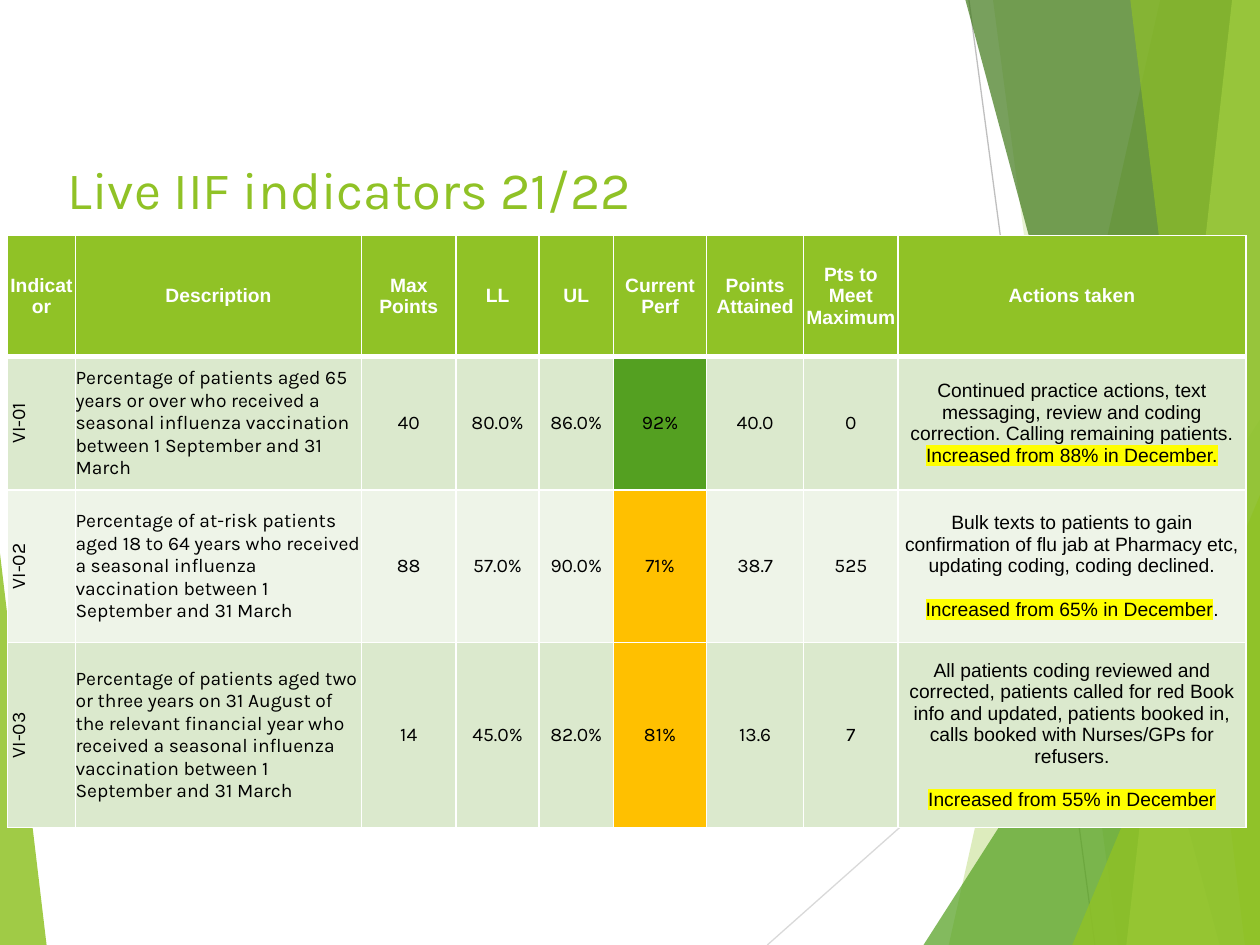
from lxml.etree import SubElement
from pptx import Presentation
from pptx.dml.color import RGBColor
from pptx.enum.shapes import MSO_CONNECTOR as LINK, MSO_SHAPE as SHAPE
from pptx.enum.text import MSO_ANCHOR as ANCHOR, PP_ALIGN as ALIGN
from pptx.oxml.ns import qn
from pptx.util import Inches, Pt

LIME = RGBColor(0x90, 0xC2, 0x26)
GREEN = RGBColor(0x54, 0xA0, 0x21)
DARK = RGBColor(0x3F, 0x78, 0x19)
PALE = RGBColor(0xC0, 0xE4, 0x74)
AMBER = RGBColor(0xFF, 0xC0, 0x00)
YELLOW = RGBColor(0xFF, 0xFF, 0x00)
BAND = RGBColor(0xDB, 0xE9, 0xCD)
LIGHT = RGBColor(0xEE, 0xF4, 0xE8)
WHITE = RGBColor(0xFF, 0xFF, 0xFF)
BLACK = RGBColor(0, 0, 0)
GRAY = RGBColor(0xBF, 0xBF, 0xBF)
SILVER = RGBColor(0xD9, 0xD9, 0xD9)

TITLE = "Live IIF indicators 21/22"
HEADS = ["Indicator", "Description", "Max Points", "LL", "UL", "Current Perf",
         "Points Attained", "Pts to Meet Maximum", "Actions taken"]
# Cells before the actions, action text, marked text, text after it, gap, score fill
ROWS = [
    (["VI-01", "Percentage of patients aged 65 years or over who received a seasonal "
      "influenza vaccination between 1 September and 31 March",
      "40", "80.0%", "86.0%", "92%", "40.0", "0"],
     "Continued practice actions, text messaging, review and coding correction. "
     "Calling remaining patients.",
     "Increased from 88% in December.", "", 0, GREEN),
    (["VI-02", "Percentage of at-risk patients aged 18 to 64 years who received a "
      "seasonal influenza vaccination between 1 September and 31 March",
      "88", "57.0%", "90.0%", "71%", "38.7", "525"],
     "Bulk texts to patients to gain confirmation of flu jab at Pharmacy etc, "
     "updating coding, coding declined.",
     "Increased from 65% in December", ".", 12.5, AMBER),
    (["VI-03", "Percentage of patients aged two or three years on 31 August of the "
      "relevant financial year who received a seasonal influenza vaccination "
      "between 1 September and 31 March",
      "14", "45.0%", "82.0%", "81%", "13.6", "7"],
     "All patients coding reviewed and corrected, patients called for red Book info "
     "and updated, patients booked in, calls booked with Nurses/GPs for refusers.",
     "Increased from 55% in December", "", 12.5, AMBER),
]
WIDTHS = [0.54, 2.27, 0.75, 0.66, 0.59, 0.74, 0.77, 0.75, 2.76]
HEIGHTS = [0.96, 1.06, 1.21, 1.47]
SCORE = HEADS.index("Current Perf")

LINES = [((7.69, 0), (8.69, 7.5), GRAY), ((10, 4.03), (6.09, 7.5), SILVER)]
# Bands reach the right edge: top left x, bottom left x, fill, opacity
# Wedges: box, apex position, fill, opacity
DECOR = [
    (9.21, 7.53, LIME, 30),
    (7.88, 8.87, LIME, 20),
    ((7.33, 3.33, 2.67, 4.17), 1, GREEN, 72),
    (7.66, 9.68, DARK, 70),
    (9.78, 8.94, PALE, 70),
    (8.97, 9.88, LIME, 65),
    ((8.51, 3.93, 1.49, 3.57), 1, LIME, 80),
    ((0, 4.39, 0.37, 3.11), 0, LIME, 85),
]


def paint(shape, color, alpha):
    shape.shadow.inherit = False
    shape.line.fill.background()
    shape.fill.solid()
    shape.fill.fore_color.rgb = color
    tint = shape.element.spPr.find(qn("a:solidFill"))[0]
    SubElement(tint, qn("a:alpha"), val=str(alpha * 1000))


def add_band(top, base):
    pts = [(Inches(x), Inches(y)) for x, y in
           [(top, -0.01), (10, -0.01), (10, 7.5), (base, 7.5)]]
    pen = shapes.build_freeform(*pts[0], scale=1.0)
    pen.add_line_segments(pts[1:], close=True)
    return pen.convert_to_shape()


def add_wedge(box, apex):
    wedge = shapes.add_shape(SHAPE.ISOSCELES_TRIANGLE, *map(Inches, box))
    wedge.adjustments[0] = apex
    return wedge


def add_run(para, text, mark=None, **look):
    run = para.add_run()
    run.text = text
    color = look.pop("color", BLACK)
    for key, val in {"size": Pt(11), "name": "Karla", "bold": False, **look}.items():
        setattr(run.font, key, val)
    run.font.color.rgb = color
    if mark:
        props = run.font._element
        light = SubElement(props, qn("a:highlight"))
        SubElement(light, qn("a:srgbClr"), val=str(mark))
        props.find(qn("a:solidFill")).addnext(light)


def style_cell(cell, fill, top, base):
    """Set margins, anchor, white borders (top and base in points) and fill."""
    for side in ("left", "right", "top", "bottom"):
        setattr(cell, "margin_" + side, 0)
    cell.vertical_anchor = ANCHOR.MIDDLE
    props = cell._tc.get_or_add_tcPr()
    for tag, size in {"lnL": 1, "lnR": 1, "lnT": top, "lnB": base}.items():
        edge = SubElement(props, qn("a:" + tag), w=str(Pt(size)))
        SubElement(SubElement(edge, qn("a:solidFill")), qn("a:srgbClr"), val=str(WHITE))
    cell.fill.solid()
    cell.fill.fore_color.rgb = fill


deck = Presentation()
deck.slide_width, deck.slide_height = Inches(10), Inches(7.5)
slide = deck.slides.add_slide(deck.slide_layouts[5])
shapes = slide.shapes

for start, end, color in LINES:
    line = shapes.add_connector(LINK.STRAIGHT, *map(Inches, start + end))
    line.line.color.rgb = color
    line.line.width = Pt(0.75)
    SubElement(line.element.spPr, qn("a:effectLst"))
for first, second, color, alpha in DECOR:
    make = add_wedge if isinstance(first, tuple) else add_band
    paint(make(first, second), color, alpha)

title = shapes.title
title.element.getparent().append(title.element)
for key, val in {"left": -1.4, "top": 1.04, "width": 8.35, "height": 0.91}.items():
    setattr(title, key, Inches(val))
title.text_frame.vertical_anchor = ANCHOR.MIDDLE
head = title.text_frame.paragraphs[0]
head.alignment = ALIGN.CENTER
add_run(head, TITLE, size=Pt(30), color=LIME)

table = shapes.add_table(len(HEIGHTS), len(WIDTHS), Inches(0.06), Inches(1.87),
                         Inches(sum(WIDTHS)), Inches(sum(HEIGHTS))).table
for col, width in zip(table.columns, WIDTHS):
    col.width = Inches(width)
for row, height in zip(table.rows, HEIGHTS):
    row.height = Inches(height)

for c, text in enumerate(HEADS):
    cell = table.cell(0, c)
    style_cell(cell, LIME, 1, 3)
    para = cell.text_frame.paragraphs[0]
    para.alignment = ALIGN.CENTER
    add_run(para, text, name="Arial", bold=True, color=WHITE)

for r, (texts, action, marked, tail, gap, score) in enumerate(ROWS, 1):
    for c, text in enumerate(texts + [action]):
        cell = table.cell(r, c)
        fill = score if c == SCORE else BAND if r % 2 else LIGHT
        style_cell(cell, fill, 3 if r == 1 else 1, 1)
        para = cell.text_frame.paragraphs[0]
        para.alignment = ALIGN.LEFT if c == 1 else ALIGN.CENTER
        add_run(para, text, name="Arial" if c == len(texts) else "Karla")
    table.cell(r, 0)._tc.tcPr.set("vert", "vert270")
    note = cell.text_frame.add_paragraph()
    note.alignment = ALIGN.CENTER
    note.space_before = Pt(gap)
    add_run(note, marked, YELLOW, name="Arial")
    if tail:
        add_run(note, tail, name="Arial")

deck.save("out.pptx")
